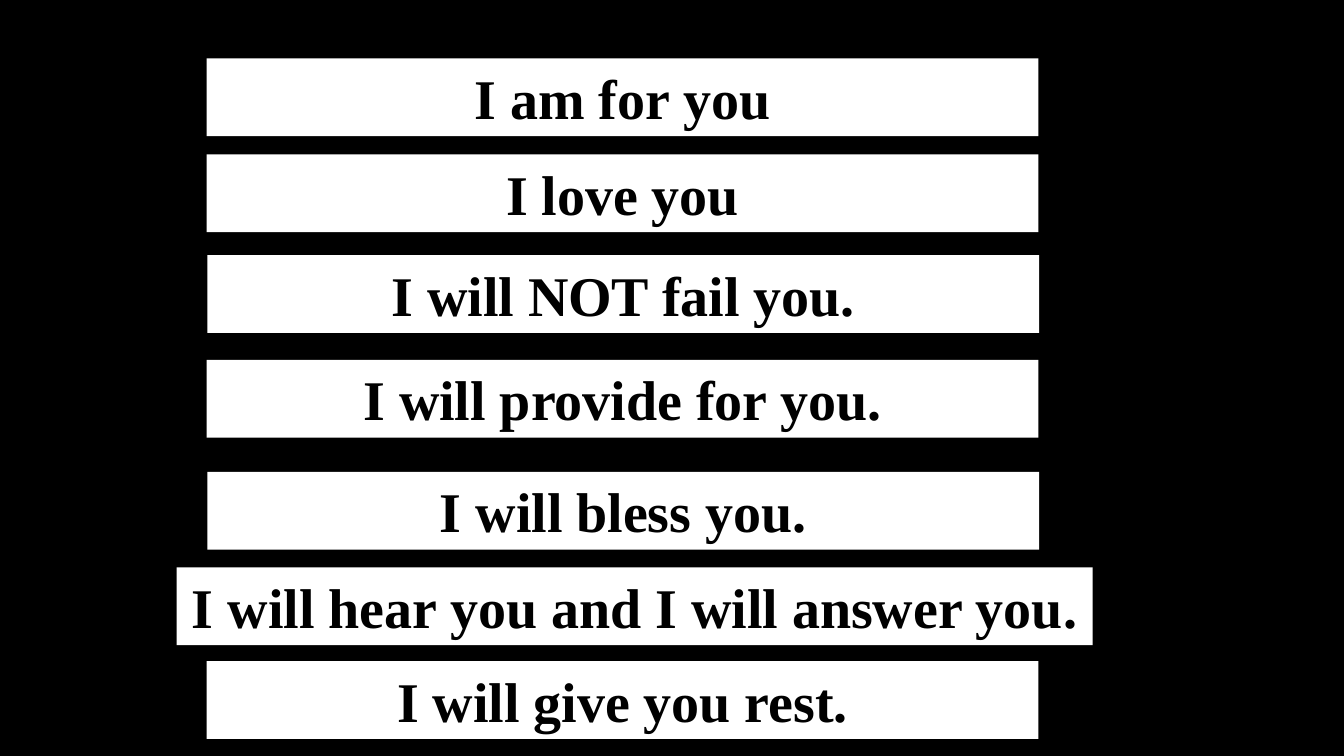
from pptx import Presentation
from pptx.dml.color import RGBColor
from pptx.enum.text import MSO_ANCHOR, MSO_AUTO_SIZE, PP_ALIGN
from pptx.util import Cm, Pt

BLACK = RGBColor(0, 0, 0)
WHITE = RGBColor(255, 255, 255)

LEFT, SHIFTED_LEFT, WIDE_LEFT = 5.21, 5.23, 4.45
WIDTH, WIDE_WIDTH, HEIGHT = 20.96, 23.09, 1.96

PROMISES = [
    ("I am for you", LEFT, 1.47, WIDTH),
    ("I love you", LEFT, 3.89, WIDTH),
    ("I will NOT fail you.", SHIFTED_LEFT, 6.43, WIDTH),
    ("I will provide for you.", LEFT, 9.07, WIDTH),
    ("I will bless you.", SHIFTED_LEFT, 11.89, WIDTH),
    ("I will hear you and I will answer you.", WIDE_LEFT, 14.3, WIDE_WIDTH),
    ("I will give you rest.", LEFT, 16.66, WIDTH),
]


def add_banner(slide, text, left, top, width, height, *, size=40, font="Times New Roman",
               color=BLACK, fill=WHITE, bold=True, align=PP_ALIGN.CENTER):
    banner = slide.shapes.add_textbox(Cm(left), Cm(top), Cm(width), Cm(height))
    banner.fill.solid()
    banner.fill.fore_color.rgb = fill
    frame = banner.text_frame
    frame.word_wrap = True
    frame.auto_size = MSO_AUTO_SIZE.SHAPE_TO_FIT_TEXT
    frame.vertical_anchor = MSO_ANCHOR.TOP
    paragraph = frame.paragraphs[0]
    paragraph.alignment = align
    run = paragraph.add_run()
    run.text = text
    run.font.name = font
    run.font.size = Pt(size)
    run.font.bold = bold
    run.font.color.rgb = color


def main():
    deck = Presentation()
    deck.slide_width, deck.slide_height = Cm(33.87), Cm(19.05)
    slide = deck.slides.add_slide(deck.slide_layouts[6])
    slide.background.fill.solid()
    slide.background.fill.fore_color.rgb = BLACK
    for promise, left, top, width in PROMISES:
        add_banner(slide, promise, left, top, width, HEIGHT)
    deck.save("out.pptx")


if __name__ == "__main__":
    main()
